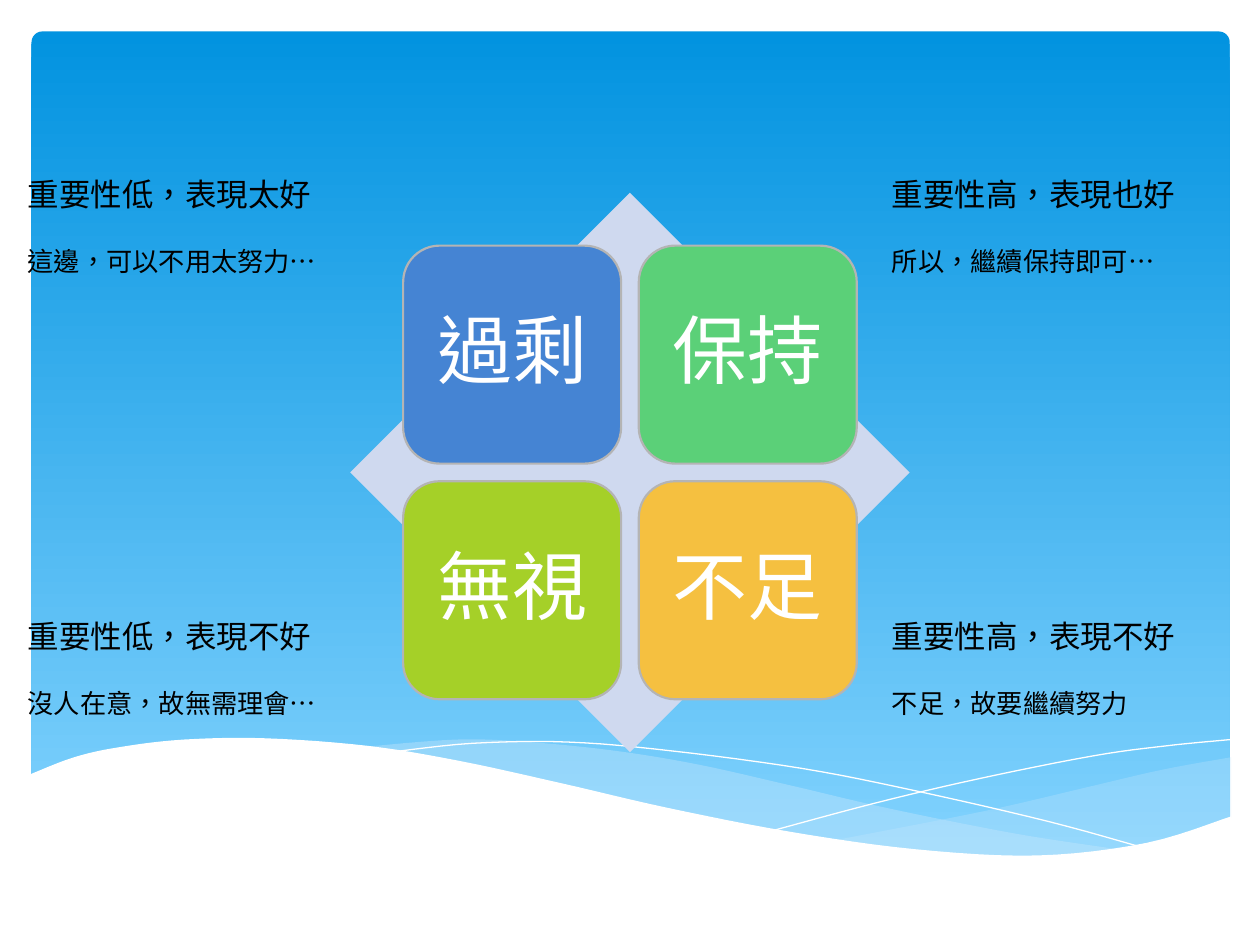
from lxml import etree
from pptx import Presentation
from pptx import util as u
from pptx.dml.color import RGBColor
from pptx.enum import lang, shapes, text
from pptx.oxml.ns import qn

SKY_TOP = RGBColor(0x02, 0x93, 0xE0)
SKY_BOTTOM = RGBColor(0x83, 0xD3, 0xFE)
MIST = RGBColor(0xC6, 0xE7, 0xFC)
WHITE = RGBColor(0xFF, 0xFF, 0xFF)
BLACK = RGBColor(0, 0, 0)
LAVENDER = RGBColor(0xCF, 0xD9, 0xEF)
GREY = RGBColor(0xB4, 0xB4, 0xB4)
BLUE = RGBColor(0x45, 0x84, 0xD3)
GREEN = RGBColor(0x5B, 0xD0, 0x78)
LIME = RGBColor(0xA5, 0xD0, 0x28)
AMBER = RGBColor(0xF5, 0xC0, 0x40)

COLS, ROWS = 100, 75
HEAD_FONT, BODY_FONT = "Cabin", "Noto Sans CJK SC"


def smooth(knots, steps=6):
    """Catmull-Rom curve through the knots, as a list of points."""
    pts = [knots[0], *knots, knots[-1]]
    curve = [knots[0]]
    for a, b, c, d in zip(pts, pts[1:], pts[2:], pts[3:]):
        for i in range(1, steps + 1):
            t = i / steps
            curve.append(tuple(
                q + t / 2 * (r - p + t * (2 * p - 5 * q + 4 * r - s
                                          + t * (3 * (q - r) + s - p)))
                for p, q, r, s in zip(a, b, c, d)))
    return curve


def write(p, words, size, font, color, **layout):
    """Add a run to a paragraph; layout holds paragraph properties."""
    r = p.add_run()
    r.text = words
    r.font.size, r.font.name = u.Pt(size), font
    r.font.color.rgb = color
    r.font.language_id = lang.MSO_LANGUAGE_ID.TRADITIONAL_CHINESE
    if font == BODY_FONT:
        etree.SubElement(r.font._element, qn("a:ea"), typeface=font)
    for name, value in layout.items():
        setattr(p, name, value)


class Deck:
    """Current slide, measured in a grid of COLS by ROWS."""

    def __init__(self, prs):
        self.s = prs.slides.add_slide(prs.slide_layouts[6])
        self.col = prs.slide_width / COLS
        self.row = prs.slide_height / ROWS

    def box(self, x, y, w, h):
        return [round(v) for v in
                (x * self.col, y * self.row, w * self.col, h * self.row)]

    def style(self, sp, fill=None, line=None, width=0, alpha=None):
        sp.shadow.inherit = False
        if fill is None:
            sp.fill.background()
        else:
            sp.fill.solid()
            sp.fill.fore_color.rgb = fill
        if alpha is not None:
            clr = sp.fill._xPr.find(qn("a:solidFill"))[0]
            etree.SubElement(clr, qn("a:alpha"), val=str(alpha * 1000))
        if line is None:
            sp.line.fill.background()
        else:
            sp.line.color.rgb = line
            sp.line.width = u.Pt(width)
        return sp

    def shape(self, kind, x, y, w, h, adj=None, **look):
        sp = self.s.shapes.add_shape(kind, *self.box(x, y, w, h))
        if adj is not None:
            sp.adjustments[0] = adj
        return self.style(sp, **look)

    def sky(self, *area):
        sp = self.shape(shapes.MSO_SHAPE.ROUNDED_RECTANGLE, *area, adj=0.013)
        sp.fill.gradient()
        sp.fill.gradient_angle = 270
        for stop, color in zip(sp.fill.gradient_stops, (SKY_TOP, SKY_BOTTOM)):
            stop.color.rgb = color

    def wave(self, *edges, close=True, **look):
        pts = [(round(x * self.col), round(y * self.row))
               for edge in edges for x, y in smooth(edge)]
        fb = self.s.shapes.build_freeform(*pts[0])
        fb.add_line_segments(pts[1:], close=close)
        self.style(fb.convert_to_shape(), **look)

    def tile(self, x, y, size, label, color):
        sp = self.shape(shapes.MSO_SHAPE.ROUNDED_RECTANGLE, x, y, size, size,
                        adj=0.167, fill=color, line=GREY, width=1.25)
        tf = sp.text_frame
        tf.vertical_anchor = text.MSO_ANCHOR.MIDDLE
        tf.margin_left = tf.margin_right = u.Inches(0.17)
        tf.margin_top = tf.margin_bottom = u.Inches(0.17)
        write(tf.paragraphs[0], label, 42.8, HEAD_FONT, WHITE,
              alignment=text.PP_ALIGN.CENTER, line_spacing=0.9)

    def note(self, x, y, heading, advice):
        tb = self.s.shapes.add_textbox(*self.box(x, y, 28.2, 9.6))
        tf = tb.text_frame
        tf.word_wrap = True
        write(tf.paragraphs[0], heading, 18, BODY_FONT, BLACK)
        write(tf.add_paragraph(), advice, 15, BODY_FONT, BLACK,
              space_before=u.Pt(18.5))


def main():
    prs = Presentation()
    prs.slide_width, prs.slide_height = u.Inches(10), u.Inches(7.5)
    deck = Deck(prs)

    # Sky and waves
    deck.sky(2.5, 2.5, 95.1, 66)
    deck.wave([(97.7, 60.1), (92.2, 61.1), (86.2, 62.5), (78, 64.4), (66.2, 66.7)],
              [(66.2, 66.7), (73.3, 67.6), (80.4, 68), (87.3, 67.6),
               (92.9, 66.5), (97.7, 64.9)],
              fill=MIST, alpha=29)
    deck.wave([(89.4, 67.5), (80.8, 66.2), (70.7, 64.2), (63, 62.4), (55.5, 60.7),
               (48.9, 59.6), (42, 58.9), (36.2, 58.7), (28.7, 59.3)],
              [(28.7, 59.3), (36.3, 60.4), (45, 62.4), (56.7, 65),
               (66.6, 66.8), (76.2, 67.9), (82.9, 68), (89.4, 67.5)],
              fill=MIST, alpha=40)
    deck.wave([(31, 59.7), (37.5, 59), (45.1, 58.9), (53.3, 59.6), (63.7, 61),
               (72.8, 62.8), (83.2, 65.2), (90.8, 67.3)],
              close=False, line=WHITE)
    deck.wave([(61.4, 65.9), (69.6, 63.7), (77.7, 61.8), (86.7, 60),
               (92.5, 59.2), (97.6, 58.7)],
              close=False, line=WHITE)
    deck.wave([(97.7, 64.8), (91, 66.9), (82.3, 67.9), (72.6, 67.4), (62.6, 66),
               (52.9, 64.1), (44.7, 62.2), (36.5, 60.4), (29.2, 59.2), (21.1, 58.6),
               (14.6, 58.7), (9.5, 59.3), (5.9, 60.1), (2.3, 61.5)],
              [(2.3, 73.1), (97.7, 73.1)],
              fill=WHITE)

    # Matrix
    deck.shape(shapes.MSO_SHAPE.DIAMOND, 27.8, 15.3, 44.4, 44.4, fill=LAVENDER)
    tiles = [("過剩", BLUE), ("保持", GREEN), ("無視", LIME), ("不足", AMBER)]
    for i, (label, color) in enumerate(tiles):
        row, col = divmod(i, 2)
        deck.tile(32 + 18.7 * col, 19.5 + 18.7 * row, 17.3, label, color)

    # Notes beside each quadrant
    notes = [("重要性低，表現太好", "這邊，可以不用太努力…"),
             ("重要性高，表現也好", "所以，繼續保持即可…"),
             ("重要性低，表現不好", "沒人在意，故無需理會…"),
             ("重要性高，表現不好", "不足，故要繼續努力")]
    for i, (heading, advice) in enumerate(notes):
        row, col = divmod(i, 2)
        deck.note(1.2 + 68.6 * col, 13.4 + 35.1 * row, heading, advice)

    prs.save("out.pptx")


if __name__ == "__main__":
    main()
